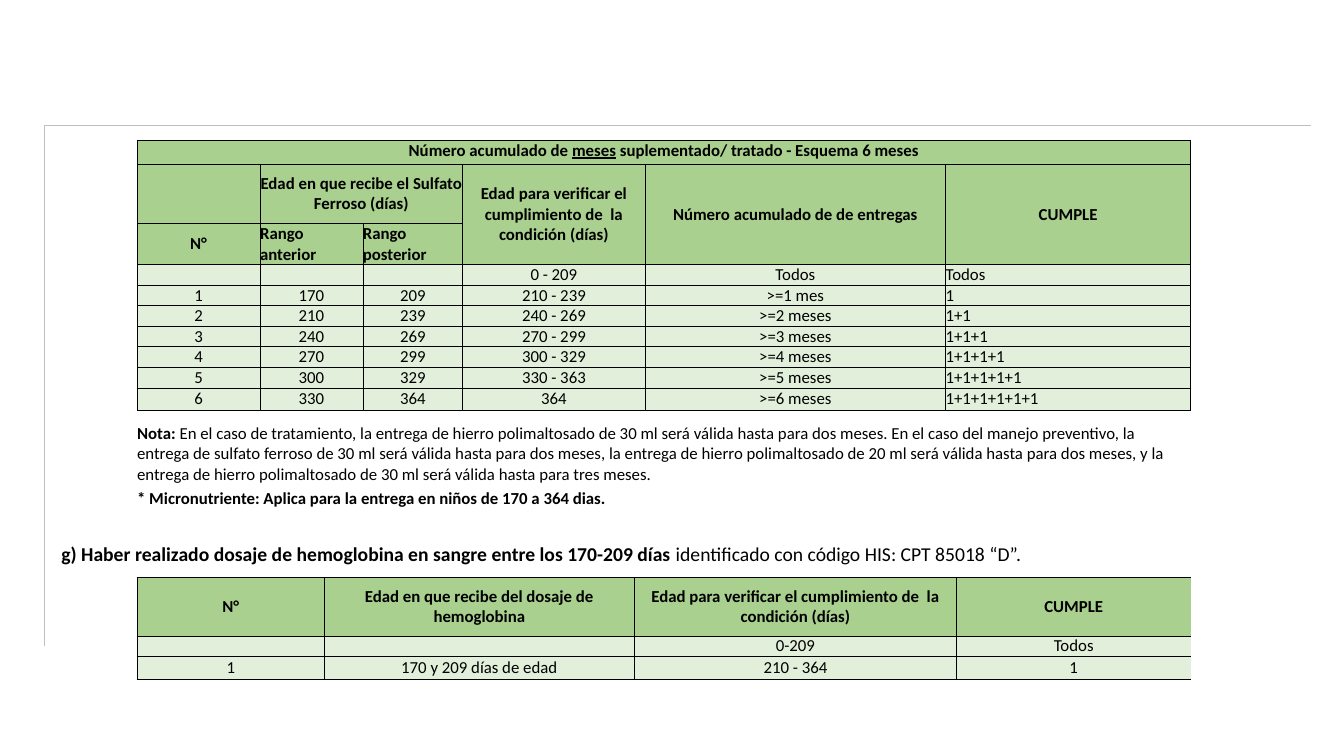
from dataclasses import dataclass
from typing import NamedTuple

from lxml import etree
from pptx import Presentation
from pptx.dml.color import RGBColor
from pptx.enum.shapes import MSO_CONNECTOR
from pptx.enum.text import MSO_ANCHOR, MSO_AUTO_SIZE, PP_ALIGN
from pptx.oxml.ns import qn
from pptx.util import Inches, Pt

LEFT, CENTER = PP_ALIGN.LEFT, PP_ALIGN.CENTER
TOP, MIDDLE = MSO_ANCHOR.TOP, MSO_ANCHOR.MIDDLE
STRAIGHT = MSO_CONNECTOR.STRAIGHT
FIT_SHAPE = MSO_AUTO_SIZE.SHAPE_TO_FIT_TEXT

FONT = "Calibri"
BLACK, WHITE, GRAY = "000000", "FFFFFF", "BFBFBF"
HEADER_GREEN, BODY_GREEN = "A9D08E", "E2EFDA"
TABLE_LEFT = 1.36


class Run(NamedTuple):
    text: str
    bold: bool = False
    underline: bool = False


@dataclass
class GridTable:
    top: float
    cols: list[float]
    rows: list[float]
    cells: list[list[str | list[Run]]]
    merges: list[tuple[int, int, int, int]]  # first row, first col, last row, last col
    header_rows: int = 0
    fills: tuple[str, str] = (HEADER_GREEN, BODY_GREEN)
    left_aligned: tuple[tuple[int, int], ...] = ()
    top_rows: tuple[int, ...] = ()
    outer: tuple[float, float] = (0.5, 0.5)  # left and right border widths
    inner: float = 0.5
    open_right: tuple[tuple[int, int], ...] = ()  # cells with no line to the next one


def rgb(color: str) -> RGBColor:
    return RGBColor.from_string(color)


def add_runs(p, runs: list[Run], size: float) -> None:
    for run in runs:
        r = p.add_run()
        r.text = run.text
        r.font.name, r.font.size = FONT, Pt(size)
        r.font.bold = run.bold
        if run.underline:
            r.font.underline = True
        r.font.color.rgb = rgb(BLACK)


def set_borders(cell, widths: dict[str, float]) -> None:
    tc_pr = cell._tc.get_or_add_tcPr()
    for i, side in enumerate("LRTB"):
        ln = etree.Element(qn(f"a:ln{side}"), w=str(Pt(widths[side])))
        if widths[side]:
            fill = etree.SubElement(ln, qn("a:solidFill"))
            etree.SubElement(fill, qn("a:srgbClr"), val=BLACK)
        else:
            etree.SubElement(ln, qn("a:noFill"))
        tc_pr.insert(i, ln)


def border_widths(spec: GridTable, i: int, j: int) -> dict[str, float]:
    left = spec.outer[0] if j == 0 else spec.inner
    right = spec.outer[1] if j == len(spec.cols) - 1 else spec.inner
    return {"L": 0 if (i, j - 1) in spec.open_right else left,
            "R": 0 if (i, j) in spec.open_right else right,
            "T": spec.inner, "B": spec.inner}


def add_grid(s, spec: GridTable) -> None:
    n_rows, n_cols = len(spec.rows), len(spec.cols)
    table = s.shapes.add_table(
        n_rows, n_cols, Inches(TABLE_LEFT), Inches(spec.top),
        Inches(sum(spec.cols)), Inches(sum(spec.rows))).table
    table.first_row = table.horz_banding = False
    for col, width in zip(table.columns, spec.cols):
        col.width = Inches(width)
    for row, height in zip(table.rows, spec.rows):
        row.height = Inches(height)

    for i in range(n_rows):
        is_header = i < spec.header_rows
        for j in range(n_cols):
            cell = table.cell(i, j)
            cell.margin_left = cell.margin_right = 0
            cell.margin_top = cell.margin_bottom = 0
            cell.vertical_anchor = TOP if i in spec.top_rows else MIDDLE
            cell.fill.solid()
            cell.fill.fore_color.rgb = rgb(spec.fills[0 if is_header else 1])
            set_borders(cell, border_widths(spec, i, j))
            p = cell.text_frame.paragraphs[0]
            p.alignment = LEFT if (i, j) in spec.left_aligned else CENTER
            content = spec.cells[i][j]
            if not content:
                # Empty cells keep the body text height
                etree.SubElement(p._p, qn("a:endParaRPr"), sz="1200")
                continue
            runs = [Run(content, is_header)] if isinstance(content, str) else content
            add_runs(p, runs, 12)

    for r1, c1, r2, c2 in spec.merges:
        table.cell(r1, c1).merge(table.cell(r2, c2))


def add_rule(s, x1: float, y1: float, x2: float, y2: float) -> None:
    line = s.shapes.add_connector(STRAIGHT, Inches(x1), Inches(y1), Inches(x2), Inches(y2))
    line.line.color.rgb = rgb(GRAY)
    line.line.width = Pt(0.5)
    etree.SubElement(line._element.spPr, qn("a:effectLst"))


def add_heading(s, runs: list[Run]) -> None:
    tf = s.shapes.add_textbox(Inches(0.51), Inches(5.33), Inches(12.63), Inches(0.34)).text_frame
    tf.word_wrap = True
    tf.auto_size = FIT_SHAPE
    add_runs(tf.paragraphs[0], runs, 14)


# Accumulated deliveries, one row per month
VERIFY = "Edad para verificar el cumplimiento de  la condición (días)"
AGES = [170, 210, 240, 270, 300, 330]
LAST_AGES = [209, 239, 269, 299, 329, 364]
CHECKS = ["210 - 239", "240 - 269", "270 - 299", "300 - 329", "330 - 363", "364"]
month_rows = [
    [str(n), str(first), str(last), check,
     f">={n} {'mes' if n == 1 else 'meses'}", "+".join("1" * n)]
    for n, (first, last, check) in enumerate(zip(AGES, LAST_AGES, CHECKS), 1)]

deliveries = GridTable(
    top=1.39,
    cols=[1.22, 1.02, 0.99, 1.81, 2.98, 2.43],
    rows=[0.24, 0.59, 0.18] + [0.2] * 6 + [0.22],
    cells=[
        [[Run("Número acumulado de ", True), Run("meses", True, True),
          Run(" suplementado/ tratado - Esquema 6 meses", True)]] + [""] * 5,
        ["", "Edad en que recibe el Sulfato Ferroso (días)", "", VERIFY,
         "Número acumulado de de entregas", "CUMPLE"],
        ["N°", "Rango anterior", "Rango posterior", "", "", ""],
        ["", "", "", "0 - 209", "Todos", "Todos"],
        *month_rows],
    merges=[(0, 0, 0, 5), (1, 1, 1, 2)] + [(1, c, 2, c) for c in (3, 4, 5)],
    header_rows=3,
    left_aligned=((2, 1), (2, 2), *((r, 5) for r in range(3, 10))),
    top_rows=(0,))

# Notes under the deliveries table
notes = GridTable(
    top=4.2,
    cols=[6.09] + [1.09] * 4,
    rows=[0.65, 0.17],
    cells=[
        [[Run("Nota: ", True),
          Run("En el caso de tratamiento, la entrega de hierro polimaltosado de 30 ml será "
              "válida hasta para dos meses. En el caso del manejo preventivo, la entrega de "
              "sulfato ferroso de 30 ml será válida hasta para dos meses, la entrega de hierro "
              "polimaltosado de 20 ml será válida hasta para dos meses, y la entrega de hierro "
              "polimaltosado de 30 ml será válida hasta para tres meses.")]] + [""] * 4,
        [[Run("* Micronutriente: Aplica para la entrega en niños de 170 a 364 dias.", True)]]
        + [""] * 4],
    merges=[(0, 0, 0, 4)],
    fills=(WHITE, WHITE),
    left_aligned=((0, 0), (1, 0)),
    top_rows=(0, 1),
    outer=(0, 0),
    inner=0)

# Hemoglobin test
hemoglobin = GridTable(
    top=5.73,
    cols=[1.86, 1.57, 1.5, 3.2, 2.32],
    rows=[0.58, 0.13, 0.23],
    cells=[
        ["N°", "Edad en que recibe del dosaje de hemoglobina", "", VERIFY, "CUMPLE"],
        ["", "", "", "0-209", "Todos"],
        ["1", "170 y 209 días de edad", "", "210 - 364", "1"]],
    merges=[(r, 1, r, 2) for r in (0, 2)],
    header_rows=1,
    outer=(1, 0),
    open_right=((1, 1),))


def main() -> None:
    prs = Presentation()
    prs.slide_width, prs.slide_height = Inches(13.33), Inches(7.5)
    s = prs.slides.add_slide(prs.slide_layouts[6])

    # Frame lines
    add_rule(s, 0.44, 1.24, 0.44, 6.41)
    add_rule(s, 0.44, 1.24, 13, 1.24)

    # Tables and section heading
    add_grid(s, deliveries)
    add_grid(s, notes)
    add_heading(s, [
        Run("g) Haber realizado dosaje de hemoglobina en sangre entre los 170-209 días ", True),
        Run("identificado con código HIS: CPT 85018 “D”.")])
    add_grid(s, hemoglobin)

    prs.save("out.pptx")


if __name__ == "__main__":
    main()
